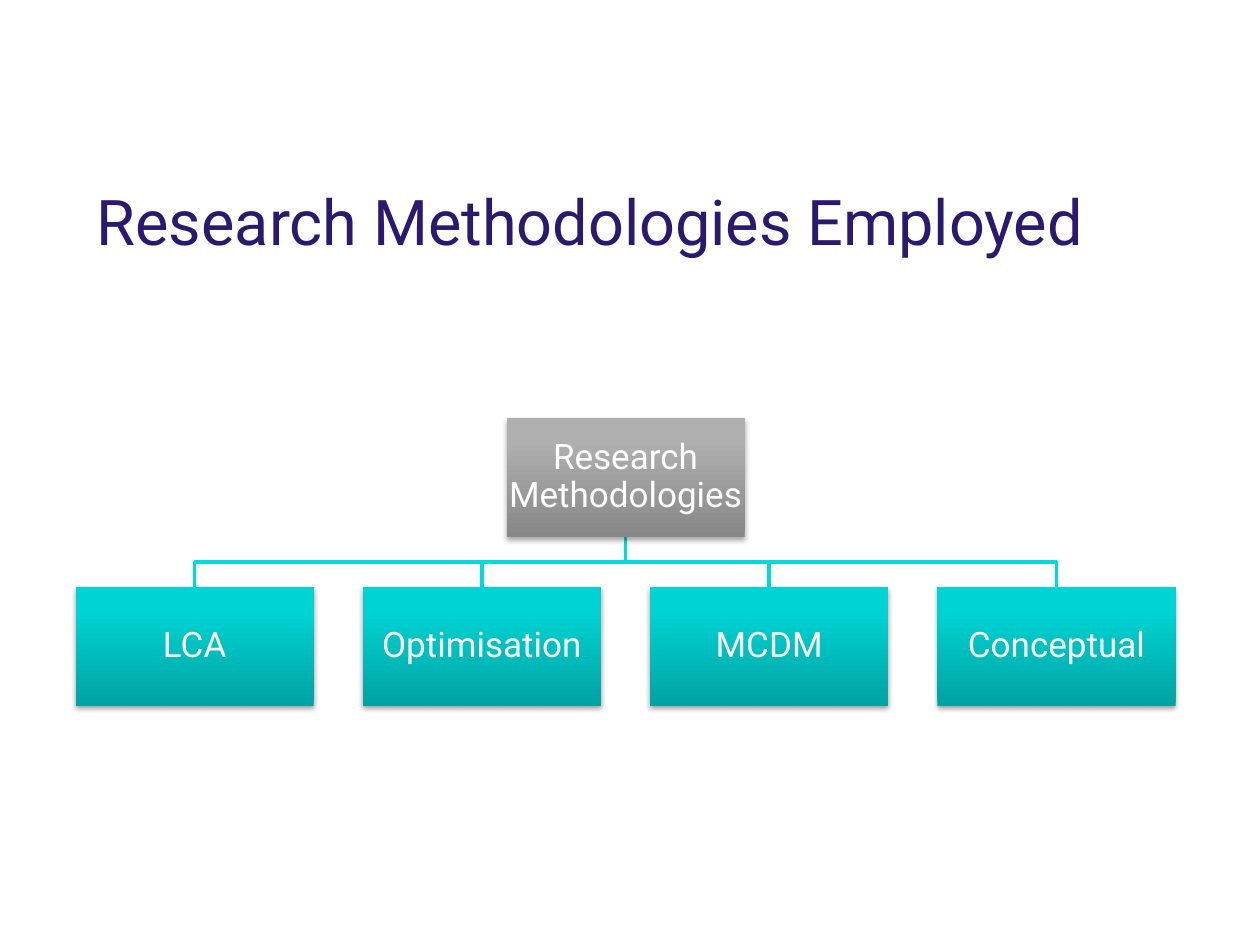
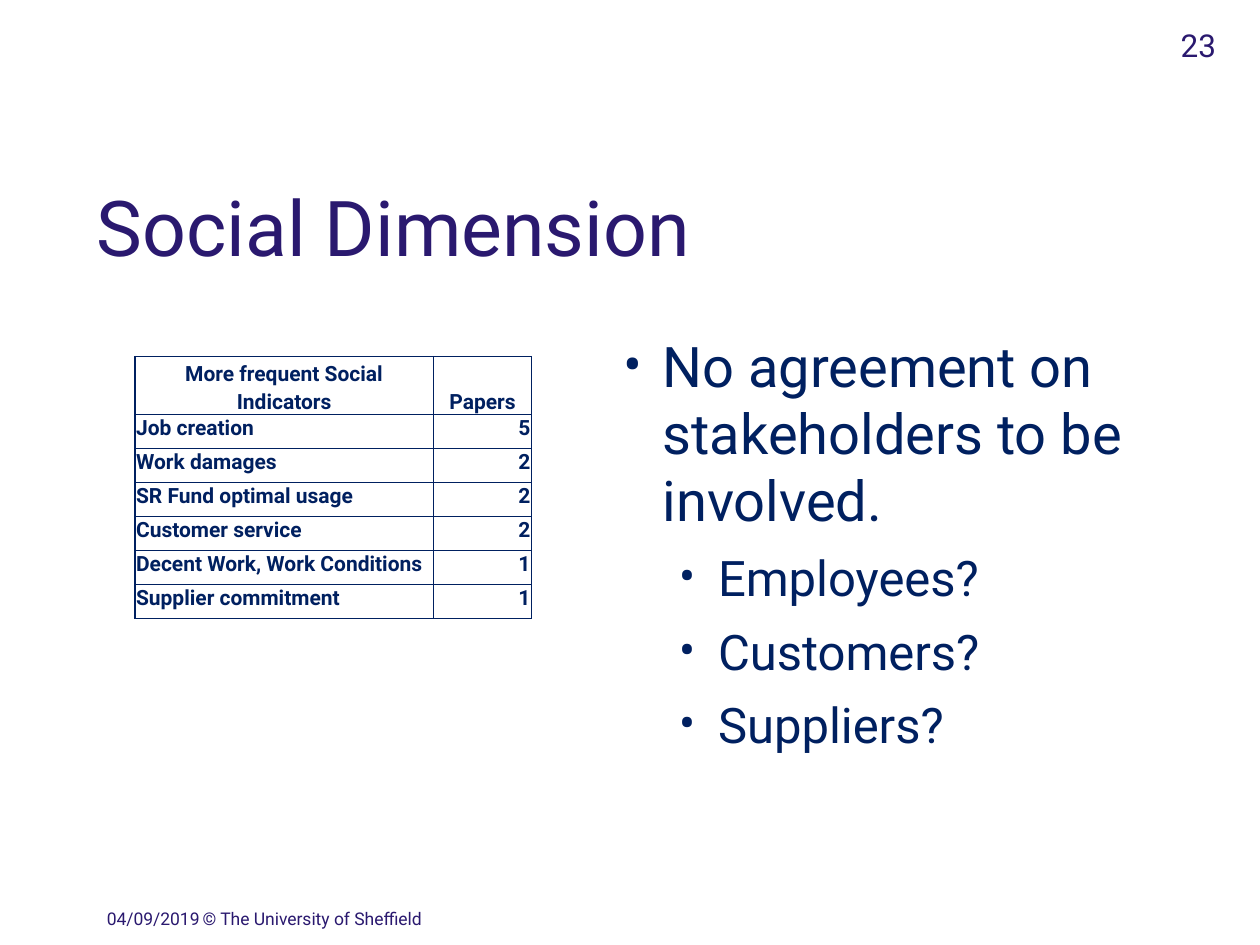
from copy import deepcopy
from dataclasses import dataclass

from lxml import etree
from pptx import Presentation
from pptx import util as u
from pptx.dml.color import RGBColor
from pptx.enum import shapes, text
from pptx.oxml import ns

FONT = "Roboto"
COLORS = {
    "title": "2A196F",
    "body": "002060",
    "white": "FFFFFF",
    "branch": "00DADA",
    "shadow": "000000",
}
LEFT, CENTER, RIGHT = text.PP_ALIGN.LEFT, text.PP_ALIGN.CENTER, text.PP_ALIGN.RIGHT
TOP, MIDDLE, BOTTOM = (
    text.MSO_ANCHOR.TOP, text.MSO_ANCHOR.MIDDLE, text.MSO_ANCHOR.BOTTOM)


@dataclass
class TextStyle:
    size: float
    color: str
    align: int = LEFT
    line_spacing: float = 1.0
    bold: bool = False


@dataclass
class Box:
    left: float
    top: float
    width: float
    height: float

    @property
    def center(self) -> float:
        return self.left + self.width / 2

    @property
    def bottom(self) -> float:
        return self.top + self.height

    def lengths(self) -> list:
        return [u.Inches(v) for v in (self.left, self.top, self.width, self.height)]


@dataclass
class NodeStyle:
    gradient: tuple  # colours at 0, 80 and 100 %, from bottom to top
    shadow_alpha: int
    shadow_distance: float


@dataclass
class Bullet:
    words: str
    size: float
    indent: float


NODE_TEXT = TextStyle(20, "white", CENTER, 0.9)
ROOT_STYLE = NodeStyle(("878787", "AFAFAF", "B0B0B0"), 35, 1.8)
METHOD_STYLE = NodeStyle(("00A3A3", "00D3D3", "00D4D4"), 38, 1.6)
METHODS = ("LCA", "Optimisation", "MCDM", "Conceptual")
NODE_WIDTH, NODE_HEIGHT = 1.89, 0.94
ROOT_TOP, METHODS_TOP = 3.32, 4.66
METHODS_LEFT, METHODS_SPAN = 0.6, 6.84

INDICATORS = (
    ("More frequent Social Indicators", "Papers"),
    ("Job creation", "5"),
    ("Work damages", "2"),
    ("SR Fund optimal usage", "2"),
    ("Customer service", "2"),
    ("Decent Work, Work Conditions", "1"),
    ("Supplier commitment", "1"),
)
COLUMN_WIDTHS = (2.37, 0.78)
HEADER_HEIGHT, ROW_HEIGHT = 0.44, 0.27

BULLETS = (
    Bullet("No agreement on stakeholders to be involved.", 32, 0.31),
    Bullet("Employees?", 28, 0.75),
    Bullet("Customers?", 28, 0.75),
    Bullet("Suppliers?", 28, 0.75),
)


def rgb(name: str) -> RGBColor:
    return RGBColor.from_string(COLORS[name])


def add_element(parent, tag: str, **attributes):
    element = etree.SubElement(parent, ns.qn(tag))
    for key, value in attributes.items():
        element.set(key, str(value))
    return element


def write(paragraph, words: str, style: TextStyle) -> None:
    paragraph.text = words
    paragraph.alignment = style.align
    if style.line_spacing != 1:
        paragraph.line_spacing = style.line_spacing
    for run in paragraph.runs:
        run.font.name = FONT
        run.font.size = u.Pt(style.size)
        run.font.bold = style.bold
        run.font.color.rgb = rgb(style.color)


def set_margins(holder, side: float, top: float, bottom: float) -> None:
    """Set the insets of a text frame or a table cell."""
    holder.margin_left = holder.margin_right = u.Inches(side)
    holder.margin_top, holder.margin_bottom = u.Inches(top), u.Inches(bottom)


def add_text(slide, box: Box, words: str, style: TextStyle) -> None:
    frame = slide.shapes.add_textbox(*box.lengths()).text_frame
    frame.word_wrap = True
    write(frame.paragraphs[0], words, style)


def add_title(slide, words: str, size: float) -> None:
    add_text(slide, Box(0.67, 1.5, 9, 0.83), words,
             TextStyle(size, "title", line_spacing=0.83))


def add_node(slide, box: Box, words: str, style: NodeStyle) -> None:
    node = slide.shapes.add_shape(shapes.MSO_SHAPE.RECTANGLE, *box.lengths())
    node.line.fill.background()
    node.fill.gradient()
    node.fill.gradient_angle = 90
    stops = node.element.spPr.find(".//" + ns.qn("a:gsLst"))
    stops.insert(1, deepcopy(stops[0]))
    for stop, position, color in zip(
            node.fill.gradient_stops, (0, 0.8, 1), style.gradient):
        stop.position = position
        stop.color.rgb = RGBColor.from_string(color)

    node.shadow.inherit = False
    effects = node.element.spPr.find(ns.qn("a:effectLst"))
    shadow = add_element(effects, "a:outerShdw", blurRad=u.Pt(3.1),
                         dist=u.Pt(style.shadow_distance), dir=5400000,
                         rotWithShape=0)
    color = add_element(shadow, "a:srgbClr", val=COLORS["shadow"])
    add_element(color, "a:alpha", val=style.shadow_alpha * 1000)

    frame = node.text_frame
    frame.word_wrap = True
    frame.vertical_anchor = MIDDLE
    set_margins(frame, 0.01, 0.01, 0.01)
    write(frame.paragraphs[0], words, NODE_TEXT)


def add_branch(slide, parent: Box, child: Box) -> None:
    """Draw an elbow from the parent's bottom to the child's top."""
    middle = (parent.bottom + child.top) / 2
    start, *corners = [(u.Inches(x), u.Inches(y)) for x, y in (
        (parent.center, parent.bottom), (parent.center, middle),
        (child.center, middle), (child.center, child.top))]
    builder = slide.shapes.build_freeform(*start)
    builder.add_line_segments(corners, close=False)
    branch = builder.convert_to_shape()
    branch.fill.background()
    branch.line.color.rgb = rgb("branch")
    branch.line.width = u.Pt(2)
    branch.shadow.inherit = False


def add_method_tree(slide) -> None:
    root = Box(METHODS_LEFT + METHODS_SPAN / 2, ROOT_TOP, NODE_WIDTH, NODE_HEIGHT)
    step = METHODS_SPAN / (len(METHODS) - 1)
    boxes = [Box(METHODS_LEFT + i * step, METHODS_TOP, NODE_WIDTH, NODE_HEIGHT)
             for i in range(len(METHODS))]
    for box in reversed(boxes):
        add_branch(slide, root, box)
    add_node(slide, root, "Research Methodologies", ROOT_STYLE)
    for box, method in zip(boxes, METHODS):
        add_node(slide, box, method, METHOD_STYLE)


def add_borders(cell) -> None:
    properties = cell._tc.get_or_add_tcPr()
    for side in ("a:lnL", "a:lnR", "a:lnT", "a:lnB"):
        line = add_element(properties, side, w=u.Pt(1))
        fill = add_element(line, "a:solidFill")
        add_element(fill, "a:srgbClr", val=COLORS["body"])


def add_indicator_table(slide) -> None:
    heights = [HEADER_HEIGHT] + [ROW_HEIGHT] * (len(INDICATORS) - 1)
    box = Box(1.07, 2.83, sum(COLUMN_WIDTHS), sum(heights))
    table = slide.shapes.add_table(
        len(INDICATORS), len(COLUMN_WIDTHS), *box.lengths()).table
    table.first_row = table.horz_banding = False
    for column, width in zip(table.columns, COLUMN_WIDTHS):
        column.width = u.Inches(width)
    for r, (row, height) in enumerate(zip(INDICATORS, heights)):
        table.rows[r].height = u.Inches(height)
        for c, words in enumerate(row):
            cell = table.cell(r, c)
            add_borders(cell)
            cell.fill.background()
            if r == 0:
                cell.vertical_anchor = BOTTOM
                set_margins(cell, 0.07, 0, 0)
                style = TextStyle(12, "body", CENTER, 1.15, True)
            else:
                cell.vertical_anchor = TOP
                set_margins(cell, 0.01, 0.01, 0)
                style = TextStyle(12, "body", RIGHT if c else LEFT, bold=True)
            write(cell.text_frame.paragraphs[0], words, style)


def add_bullets(slide, box: Box) -> None:
    frame = slide.shapes.add_textbox(*box.lengths()).text_frame
    frame.word_wrap = True
    for i, bullet in enumerate(BULLETS):
        paragraph = frame.add_paragraph() if i else frame.paragraphs[0]
        properties = paragraph._p.get_or_add_pPr()
        properties.set("marL", str(u.Inches(bullet.indent)))
        properties.set("indent", str(u.Inches(-0.31)))
        add_element(properties, "a:buFont", typeface=FONT)
        add_element(properties, "a:buChar", char="•")
        write(paragraph, bullet.words, TextStyle(bullet.size, "body"))
        if i:
            paragraph.space_before = u.Pt(8.4)


def add_footer(slide, date: str, number: str) -> None:
    small = TextStyle(10, "title")
    add_text(slide, Box(0.75, 7.16, 1, 0.33), date, small)
    add_text(slide, Box(1.51, 7.16, 5.67, 0.33), "© The University of Sheffield", small)
    add_text(slide, Box(7.67, 0.16, 2.08, 0.5), number, TextStyle(18, "title", RIGHT))


def main() -> None:
    presentation = Presentation()
    presentation.slide_width, presentation.slide_height = u.Inches(10), u.Inches(7.5)
    blank = presentation.slide_layouts[6]

    methods_slide = presentation.slides.add_slide(blank)
    add_method_tree(methods_slide)
    add_title(methods_slide, "Research Methodologies Employed", 36)

    social_slide = presentation.slides.add_slide(blank)
    add_title(social_slide, "Social Dimension", 44)
    add_bullets(social_slide, Box(4.85, 2.58, 4.88, 4.08))
    add_footer(social_slide, "04/09/2019", "23")
    add_indicator_table(social_slide)

    presentation.save("out.pptx")


if __name__ == "__main__":
    main()
